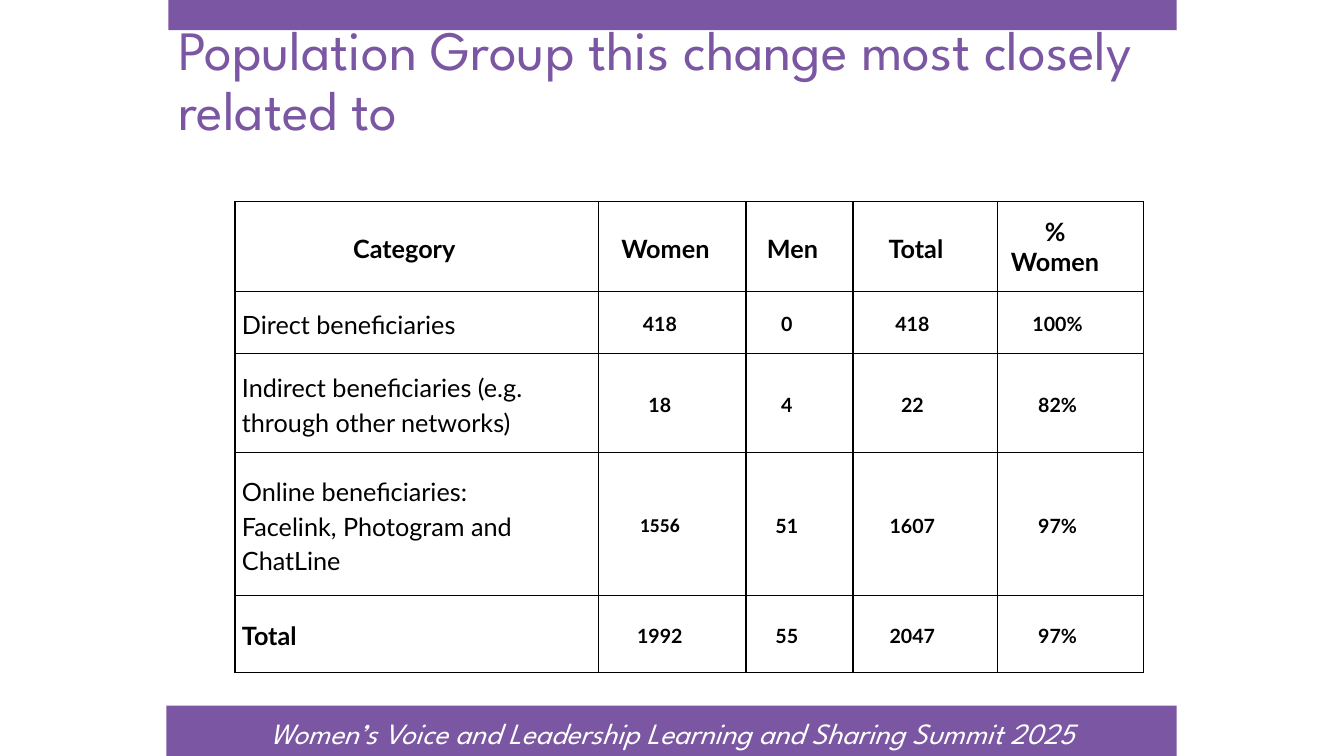
from lxml.etree import SubElement
from pptx import Presentation
from pptx.dml.color import RGBColor
from pptx.enum.shapes import MSO_SHAPE as Shape
from pptx.enum.text import MSO_ANCHOR as Anchor, PP_ALIGN as Align
from pptx.oxml import parse_xml
from pptx.oxml.ns import nsdecls, qn
from pptx.util import Emu, Pt

PURPLE = RGBColor(0x7B, 0x56, 0xA3)
BLACK = RGBColor(0, 0, 0)
WHITE = RGBColor(0xFF, 0xFF, 0xFF)
HEADING_FONT = "League Spartan"
TABLE_FONT = "Lato"

COLUMN_WIDTHS = [361, 146, 106, 143, 145]
ROW_HEIGHTS = [89, 62, 98, 142, 76]
HEADER_INDENTS = [25, 14, 14, 18, 30]
BODY_INDENT = 25
CELL_MARGIN = 7
ROWS = [
    ["Category", "Women", "Men", "Total", "%\nWomen"],
    ["Direct beneficiaries", "418", "0", "418", "100%"],
    ["Indirect beneficiaries (e.g. through other networks)", "18", "4", "22", "82%"],
    ["Online beneficiaries: Facelink, Photogram and ChatLine", "1556", "51", "1607", "97%"],
    ["Total", "1992", "55", "2047", "97%"],
]


def px(count):
    """Lengths are given at 100 px to the inch."""
    return Emu(count * 9144)


def add_text(para, text, size, font, color, bold=False, italic=False):
    run = para.add_run()
    run.text = text
    run.font.size = Pt(size)
    run.font.name = font
    run.font.bold = bold
    run.font.italic = italic
    run.font.color.rgb = color
    return run


def add_band(page, box):
    band = page.shapes.add_shape(Shape.RECTANGLE, *map(px, box))
    band.shadow.inherit = False
    band.fill.solid()
    band.fill.fore_color.rgb = PURPLE
    band.line.fill.background()


def add_text_frame(page, box, anchor):
    frame = page.shapes.add_textbox(*map(px, box)).text_frame
    frame.word_wrap = True
    frame.vertical_anchor = anchor
    return frame


def add_title(page, box):
    para = add_text_frame(page, box, Anchor.MIDDLE).paragraphs[0]
    para.line_spacing = 0.9
    run = add_text(para, "Population Group this change most closely related to",
                   39.6, HEADING_FONT, PURPLE)
    outline = parse_xml(f'<a:ln {nsdecls("a")} w="{Pt(0.75)}"><a:solidFill>'
                        f'<a:srgbClr val="{PURPLE}"/></a:solidFill></a:ln>')
    run.font._element.insert(0, outline)


def add_footer(page, box):
    left, top, width, height = box
    add_band(page, box)
    caption = (left + 19, top + 2, width - 36, height - 2)
    para = add_text_frame(page, caption, Anchor.TOP).paragraphs[0]
    para.alignment = Align.CENTER
    para.line_spacing = 1.07
    add_text(para, "Women’s Voice and Leadership Learning and Sharing Summit 2025",
             21, HEADING_FONT, WHITE, italic=True)


def add_borders(cell):
    properties = cell._tc.get_or_add_tcPr()
    for position, side in enumerate(("lnL", "lnR", "lnT", "lnB")):
        border = parse_xml(f'<a:{side} {nsdecls("a")} w="{Pt(1)}"/>')
        fill = SubElement(border, qn("a:solidFill"))
        SubElement(fill, qn("a:srgbClr"), val=str(BLACK))
        properties.insert(position, border)


def fill_cell(cell, text, row, column):
    is_header, is_label = row == 0, column == 0
    indent = HEADER_INDENTS[column] if is_header else BODY_INDENT
    cell.fill.background()
    add_borders(cell)
    cell.vertical_anchor = Anchor.MIDDLE
    cell.margin_left = px(CELL_MARGIN)
    cell.margin_right = px(CELL_MARGIN + indent)
    cell.margin_top = cell.margin_bottom = 0
    lines = text.split("\n")
    for index, line in enumerate(lines):
        frame = cell.text_frame
        para = frame.add_paragraph() if index else frame.paragraphs[0]
        para.alignment = Align.LEFT if is_label and not is_header else Align.CENTER
        para.line_spacing = 1.15 if len(lines) == 1 else 1.0
        add_text(para, line,
                 size=18 if is_header or is_label else 14,
                 font="Calibri" if text == "1556" else TABLE_FONT,
                 color=BLACK,
                 bold=is_header or not is_label or text == "Total")


def add_beneficiary_table(page, left, top):
    box = (left, top, sum(COLUMN_WIDTHS), sum(ROW_HEIGHTS))
    table = page.shapes.add_table(len(ROWS), len(COLUMN_WIDTHS), *map(px, box)).table
    table.first_row = table.horz_banding = False
    for column, width in zip(table.columns, COLUMN_WIDTHS):
        column.width = px(width)
    for row, height in zip(table.rows, ROW_HEIGHTS):
        row.height = px(height)
    for row, texts in enumerate(ROWS):
        for column, text in enumerate(texts):
            fill_cell(table.cell(row, column), text, row, column)


def main():
    deck = Presentation()
    deck.slide_width, deck.slide_height = px(1333), px(750)
    page = deck.slides.add_slide(deck.slide_layouts[6])
    add_footer(page, (165, 700, 1002, 50))
    add_band(page, (167, 0, 1000, 30))
    add_title(page, (167, 36, 1000, 92))
    add_beneficiary_table(page, 233, 200)
    deck.save("out.pptx")


if __name__ == "__main__":
    main()
